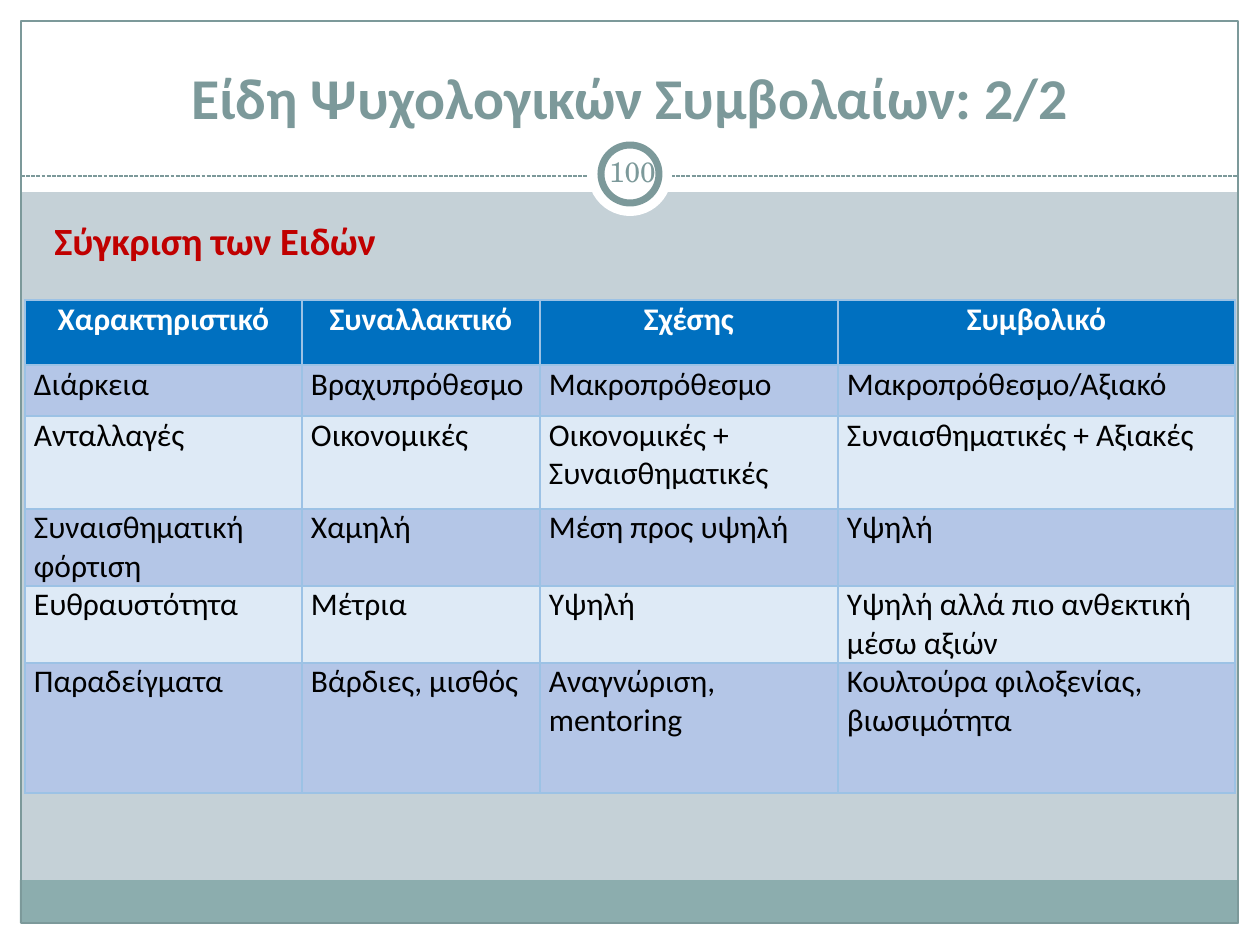
from lxml.etree import SubElement
from pptx import Presentation
from pptx.dml.color import RGBColor
from pptx.enum.dml import MSO_LINE
from pptx.enum.shapes import MSO_CONNECTOR, MSO_SHAPE
from pptx.enum.text import MSO_ANCHOR, MSO_AUTO_SIZE, PP_ALIGN
from pptx.oxml.ns import qn
from pptx.util import Pt

PX = 914400 / 126
COLORS = {
    "background": "C5D1D7", "white": "FFFFFF", "black": "000000",
    "frame": "7C999A", "footer": "8CADAE", "subtitle": "C00000",
    "header": "0070C0", "odd": "B4C6E7", "even": "DEEAF6", "border": "9CC2E5",
}


def px(*lengths):
    return [round(length * PX) for length in lengths]


def write(frame, text, color, size, bold=False, align=PP_ALIGN.LEFT, font="Calibri"):
    paragraph = frame.paragraphs[0]
    paragraph.alignment = align
    run = paragraph.add_run()
    run.text = text
    for name, value in {"name": font, "size": Pt(size), "bold": bold}.items():
        setattr(run.font, name, value)
    run.font.color.rgb = RGBColor.from_string(COLORS[color])


presentation = Presentation()
presentation.slide_width, presentation.slide_height = px(1260, 945)
slide = presentation.slides.add_slide(presentation.slide_layouts[5])
slide.background.fill.solid()
slide.background.fill.fore_color.rgb = RGBColor.from_string(COLORS["background"])

# Margins, footer band, frame, divider and number ring
RECTANGLE, OVAL = MSO_SHAPE.RECTANGLE, MSO_SHAPE.OVAL
backdrop = [
    (RECTANGLE, (0, 924, 1260, 21), "white", None),
    (RECTANGLE, (0, 0, 1260, 192), "white", None),
    (RECTANGLE, (0, 0, 21, 945), "white", None),
    (RECTANGLE, (1239, 0, 21, 945), "white", None),
    (RECTANGLE, (20, 880, 1218, 43), "footer", None),
    (RECTANGLE, (21, 21, 1217, 902), None, 0.75),
    ("divider", (21, 176, 1239, 176), None, 0.75),
    (OVAL, (588, 132, 84, 84), "white", None),
    (OVAL, (601, 145, 58, 58), "white", 4),
]
for kind, box, fill, line_width in backdrop:
    if kind == "divider":
        shape = slide.shapes.add_connector(MSO_CONNECTOR.STRAIGHT, *px(*box))
        shape.line.dash_style = MSO_LINE.SQUARE_DOT
        SubElement(shape.element.spPr, qn("a:effectLst"))
    else:
        shape = slide.shapes.add_shape(kind, *px(*box))
        shape.shadow.inherit = False
        if fill:
            shape.fill.solid()
            shape.fill.fore_color.rgb = RGBColor.from_string(COLORS[fill])
        else:
            shape.fill.background()
    if line_width:
        shape.line.color.rgb = RGBColor.from_string(COLORS["frame"])
        shape.line.width = Pt(line_width)
    else:
        shape.line.fill.background()

subtitle = slide.shapes.add_textbox(*px(42, 211, 1172, 60))
subtitle.text_frame.word_wrap = True
write(subtitle.text_frame, "Σύγκριση των Ειδών", "subtitle", 22, bold=True)

page_number = slide.shapes.add_textbox(*px(601, 141, 63, 60))
number_format = {"word_wrap": True, "vertical_anchor": MSO_ANCHOR.MIDDLE}
for side in ("left", "top", "right", "bottom"):
    number_format[f"margin_{side}"] = px(6)[0]
for name, value in number_format.items():
    setattr(page_number.text_frame, name, value)
write(page_number.text_frame, "100", "frame", 16, align=PP_ALIGN.CENTER,
      font="TeX Gyre Schola")

# The title goes in front of the white header band
title = slide.shapes.title
title.element.getparent().append(title.element)
title.left, title.top, title.width, title.height = px(42, 32, 1176, 105)
title_format = {"word_wrap": True, "auto_size": MSO_AUTO_SIZE.NONE,
                "vertical_anchor": MSO_ANCHOR.BOTTOM}
for name, value in title_format.items():
    setattr(title.text_frame, name, value)
write(title.text_frame, "Είδη Ψυχολογικών Συμβολαίων: 2/2", "frame", 33,
      bold=True, align=PP_ALIGN.CENTER)

# Comparison table
contracts = [
    ("Χαρακτηριστικό", "Συναλλακτικό", "Σχέσης", "Συμβολικό"),
    ("Διάρκεια", "Βραχυπρόθεσμο", "Μακροπρόθεσμο", "Μακροπρόθεσμο/Αξιακό"),
    ("Ανταλλαγές", "Οικονομικές", "Οικονομικές + Συναισθηματικές",
     "Συναισθηματικές + Αξιακές"),
    ("Συναισθηματική φόρτιση", "Χαμηλή", "Μέση προς υψηλή", "Υψηλή"),
    ("Ευθραυστότητα", "Μέτρια", "Υψηλή", "Υψηλή αλλά πιο ανθεκτική μέσω αξιών"),
    ("Παραδείγματα", "Βάρδιες, μισθός", "Αναγνώριση, mentoring",
     "Κουλτούρα φιλοξενίας, βιωσιμότητα"),
]
column_widths = px(277, 238, 298, 397)
row_heights = px(65, 51, 93, 72, 68, 130)
table = slide.shapes.add_table(
    len(contracts), len(column_widths), *px(25, 300),
    sum(column_widths), sum(row_heights)).table
for column, width in zip(table.columns, column_widths):
    column.width = width
for row, height in zip(table.rows, row_heights):
    row.height = height

margin = px(9)[0]
cell_format = {"margin_left": margin, "margin_right": margin,
               "margin_top": 0, "margin_bottom": 0}
for row_index, texts in enumerate(contracts):
    is_header = row_index == 0
    fill = "header" if is_header else "odd" if row_index % 2 else "even"
    for column_index, text in enumerate(texts):
        cell = table.cell(row_index, column_index)
        for name, value in cell_format.items():
            setattr(cell, name, value)
        write(cell.text_frame, text, "white" if is_header else "black", 18,
              bold=is_header, align=PP_ALIGN.CENTER if is_header else PP_ALIGN.LEFT)
        # Borders come before the fill in the cell properties
        properties = cell._tc.get_or_add_tcPr()
        for edge in ("lnL", "lnR", "lnT", "lnB"):
            border = SubElement(properties, qn(f"a:{edge}"), w=str(Pt(1)))
            border_fill = SubElement(border, qn("a:solidFill"))
            SubElement(border_fill, qn("a:srgbClr"), val=COLORS["border"])
        cell.fill.solid()
        cell.fill.fore_color.rgb = RGBColor.from_string(COLORS[fill])

presentation.save("out.pptx")
